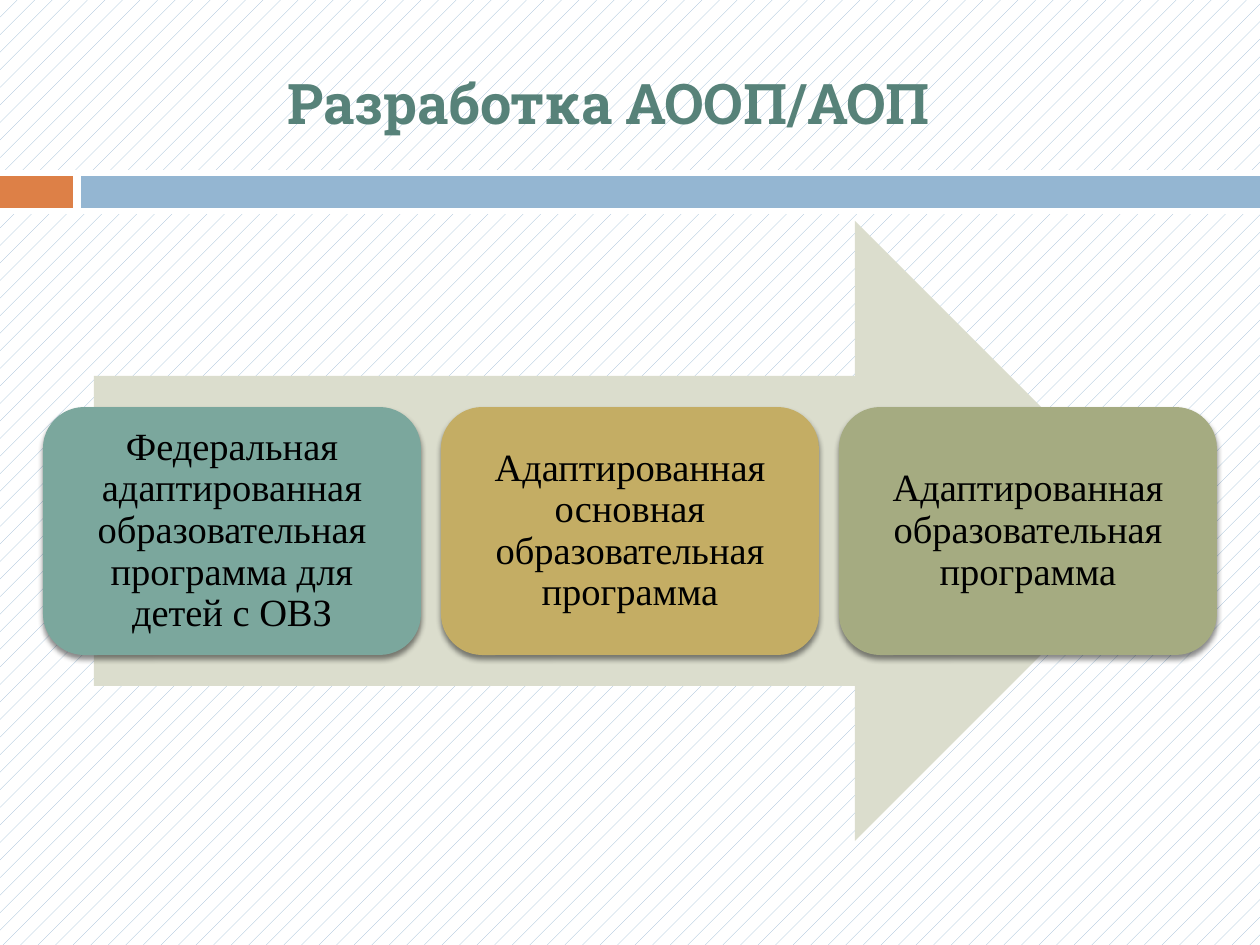
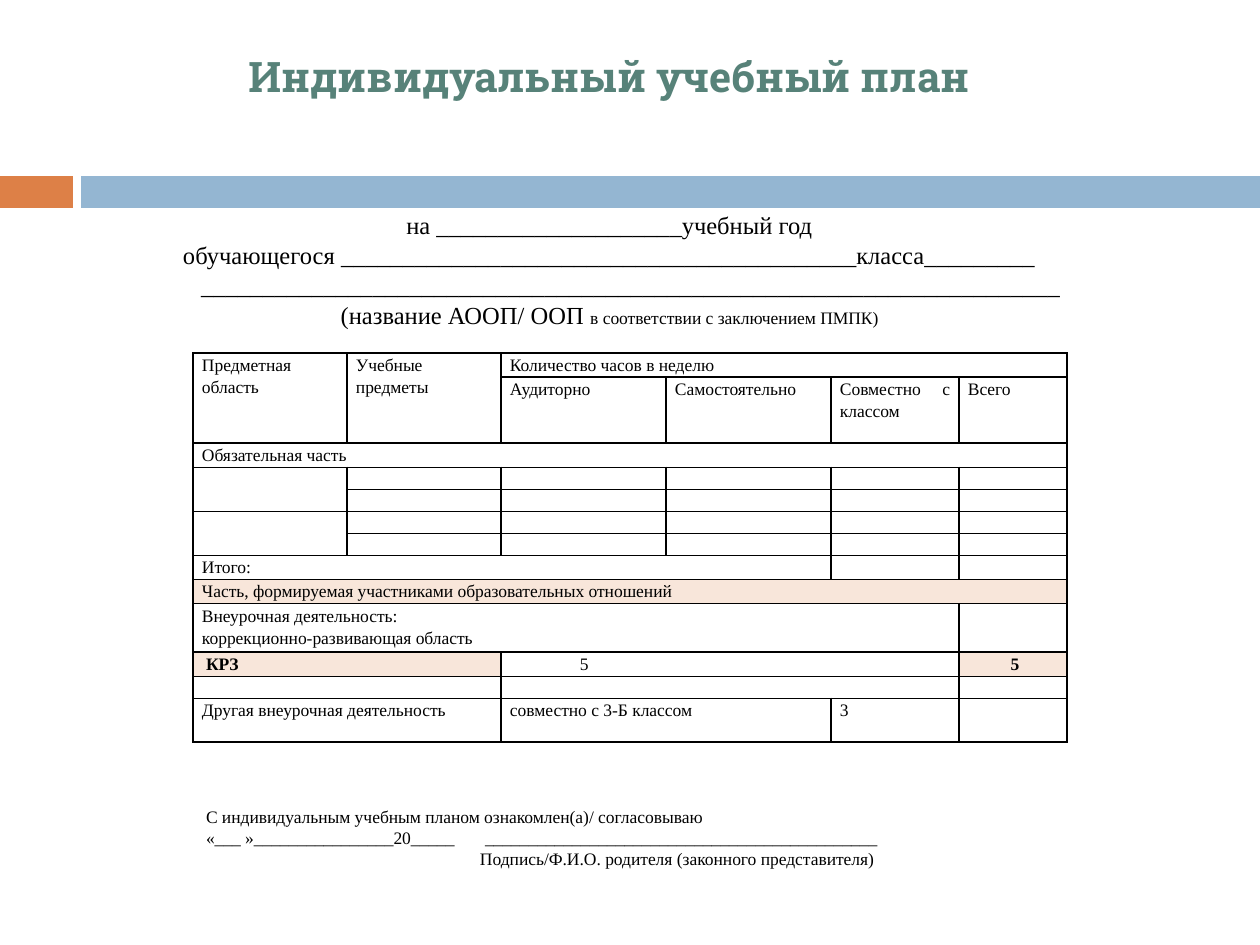
from lxml import etree
from pptx import Presentation
from pptx.dml.color import RGBColor
from pptx.enum.dml import MSO_PATTERN
from pptx.enum.shapes import MSO_SHAPE
from pptx.enum.text import MSO_ANCHOR, PP_ALIGN
from pptx.oxml.ns import qn
from pptx.util import Emu, Pt

RECT, ROUND_RECT = MSO_SHAPE.RECTANGLE, MSO_SHAPE.ROUNDED_RECTANGLE
RIGHT_ARROW = MSO_SHAPE.RIGHT_ARROW
LEFT, CENTER, JUSTIFY = PP_ALIGN.LEFT, PP_ALIGN.CENTER, PP_ALIGN.JUSTIFY
TOP, MIDDLE = MSO_ANCHOR.TOP, MSO_ANCHOR.MIDDLE
DOTS = MSO_PATTERN.PERCENT_5

WHITE = RGBColor(0xFF, 0xFF, 0xFF)
BLACK = RGBColor(0x00, 0x00, 0x00)
ORANGE = RGBColor(0xDD, 0x80, 0x47)
BLUE = RGBColor(0x94, 0xB6, 0xD2)
GREEN = RGBColor(0x57, 0x82, 0x79)
PALE_OLIVE = RGBColor(0xDB, 0xDD, 0xCD)
TEAL = RGBColor(0x7B, 0xA7, 0x9D)
SAND = RGBColor(0xC4, 0xAD, 0x64)
OLIVE = RGBColor(0xA5, 0xAB, 0x81)
PEACH = RGBColor(0xF8, 0xE6, 0xDA)

TITLE_FONT, BODY_FONT = "Roboto Slab", "Times New Roman"
PX_PER_INCH = 126


def px(length):
    return Emu(round(length * 914400 / PX_PER_INCH))


class Deck:
    """Holds the presentation, its style and the current slide."""

    def __init__(self):
        self.prs = Presentation()
        self.prs.slide_width, self.prs.slide_height = px(1260), px(945)
        self.slide = None

    def new_slide(self, title, title_size, title_top):
        self.slide = self.prs.slides.add_slide(self.prs.slide_layouts[6])
        # Band under the title
        self.shape(RECT, 0, 170, 1260, 44, WHITE)
        self.shape(RECT, 0, 176, 73, 32, ORANGE)
        self.shape(RECT, 81, 176, 1179, 32, BLUE)
        self.text_box(0, title_top, 1218, 136, [title], title_size, CENTER, anchor=MIDDLE,
                      font=TITLE_FONT, color=GREEN, bold=True)

    def pattern_background(self):
        fill = self.slide.background.fill
        fill.patterned()
        fill.pattern = DOTS
        fill.fore_color.rgb, fill.back_color.rgb = BLUE, WHITE

    def shape(self, kind, left, top, width, height, color):
        shape = self.slide.shapes.add_shape(kind, px(left), px(top), px(width), px(height))
        shape.fill.solid()
        shape.fill.fore_color.rgb = color
        shape.line.fill.background()
        shape.shadow.inherit = False
        return shape

    def card(self, left, top, width, height, color, text):
        card = self.shape(ROUND_RECT, left, top, width, height, color)
        effects = card._element.spPr.find(qn("a:effectLst"))
        shadow = etree.SubElement(effects, qn("a:outerShdw"), blurRad=str(Pt(3)),
                                  dist=str(Pt(2.4)), dir="5400000", rotWithShape="0")
        black = etree.SubElement(shadow, qn("a:srgbClr"), val="000000")
        etree.SubElement(black, qn("a:alpha"), val="45000")
        self.set_lines(card.text_frame, [text], 22, CENTER, anchor=MIDDLE, spacing=0.9,
                       margins=(11, 11))

    def text_box(self, left, top, width, height, lines, size, align, **style):
        box = self.slide.shapes.add_textbox(px(left), px(top), px(width), px(height))
        self.set_lines(box.text_frame, lines, size, align, **style)
        return box.text_frame.paragraphs

    def set_lines(self, frame, lines, size, align, anchor=TOP, spacing=1.0, margins=(12, 6),
                  **font):
        frame.word_wrap = True
        frame.vertical_anchor = anchor
        frame.margin_left = frame.margin_right = px(margins[0])
        frame.margin_top = frame.margin_bottom = px(margins[1])
        frame.text = "\n".join(lines)
        for paragraph in frame.paragraphs:
            paragraph.alignment = align
            paragraph.line_spacing = spacing
            for run in paragraph.runs:
                self.format_run(run, size, **font)

    def format_run(self, run, size, font=BODY_FONT, color=BLACK, bold=False):
        run.font.name, run.font.size = font, Pt(size)
        run.font.color.rgb, run.font.bold = color, bold

    def indent(self, paragraph, left):
        paragraph._p.get_or_add_pPr().set("marL", str(px(left)))

    def tab_stop(self, paragraph, position):
        tabs = etree.SubElement(paragraph._p.get_or_add_pPr(), qn("a:tabLst"))
        etree.SubElement(tabs, qn("a:tab"), pos=str(px(position)), algn="l")

    def table(self, left, top, widths, heights):
        frame = self.slide.shapes.add_table(len(heights), len(widths), px(left), px(top),
                                            px(sum(widths)), px(sum(heights)))
        table = frame.table
        table.first_row = table.horz_banding = False
        for column, width in zip(table.columns, widths):
            column.width = px(width)
        for row, height in zip(table.rows, heights):
            row.height = px(height)
        for cell in table.iter_cells():
            self.plain_cell(cell)
        return table

    def plain_cell(self, cell):
        """Black borders, no fill, and a small font in an empty cell."""
        cell.margin_left = cell.margin_right = px(9)
        cell.margin_top = cell.margin_bottom = 0
        properties = cell._tc.get_or_add_tcPr()
        for side in ("lnL", "lnR", "lnT", "lnB"):
            line = etree.SubElement(properties, qn(f"a:{side}"), w=str(Pt(1)))
            solid = etree.SubElement(line, qn("a:solidFill"))
            etree.SubElement(solid, qn("a:srgbClr"), val=str(BLACK))
        cell.fill.background()
        etree.SubElement(cell.text_frame.paragraphs[0]._p, qn("a:endParaRPr"), sz="1000")

    def fill_cell(self, cell, text, align=JUSTIFY, bold=False, indent=0):
        cell.text_frame.text = text
        for paragraph in cell.text_frame.paragraphs:
            paragraph.alignment = align
            paragraph.line_spacing = 1.15
            self.indent(paragraph, indent)
            for run in paragraph.runs:
                self.format_run(run, 10, bold=bold)


def programmes_slide(deck):
    deck.new_slide("Разработка АООП/АОП", 32, 34)
    deck.pattern_background()
    deck.shape(RIGHT_ARROW, 94, 221, 1071, 620, PALE_OLIVE)
    programmes = [
        (TEAL, "Федеральная адаптированная образовательная программа для детей с ОВЗ"),
        (SAND, "Адаптированная основная образовательная программа"),
        (OLIVE, "Адаптированная образовательная программа"),
    ]
    for i, (color, name) in enumerate(programmes):
        deck.card(43 + 398 * i, 407, 378, 248, color, name)


def study_plan_slide(deck):
    deck.new_slide("Индивидуальный учебный план", 24, 8)

    # Form heading
    heading = deck.text_box(142, 210, 935, 120, [
        "на " + "_" * 20 + "учебный год",
        "обучающегося " + "_" * 42 + "класса" + "_" * 9,
        "_" * 70,
        "(название АООП/ ООП ",
    ], 14, CENTER, spacing=Pt(17), margins=(0, 0))
    deck.indent(heading[2], 43)
    conclusion = heading[3].add_run()
    conclusion.text = "в соответствии с заключением ПМПК)"
    deck.format_run(conclusion, 10)

    # Hours table: row heights follow from the number of text lines
    row_lines = [1, 3, 1, 1, 1, 1, 1, 1, 1, 2, 1, 1, 2]
    hours = deck.table(193, 353, [154, 154, 165, 165, 128, 108], [22 * n for n in row_lines])
    merges = [
        (0, 0, 1, 0), (0, 1, 1, 1), (0, 2, 0, 5), (2, 0, 2, 5), (3, 0, 4, 0),
        (5, 0, 6, 0), (7, 0, 7, 3), (8, 0, 8, 5), (9, 0, 9, 4), (10, 0, 10, 1),
        (10, 2, 10, 4), (11, 0, 11, 1), (11, 2, 11, 4), (12, 0, 12, 1), (12, 2, 12, 3),
    ]
    for top, left, bottom, right in merges:
        hours.cell(top, left).merge(hours.cell(bottom, right))
    entries = {
        (0, 0): "Предметная область",
        (0, 1): "Учебные предметы",
        (0, 2): "Количество часов в неделю",
        (1, 2): "Аудиторно",
        (1, 3): "Самостоятельно",
        (1, 4): "Совместно с классом",
        (1, 5): "Всего",
        (2, 0): "Обязательная часть",
        (7, 0): "Итого:",
        (8, 0): "Часть, формируемая участниками образовательных отношений",
        (9, 0): "Внеурочная деятельность:\nкоррекционно-развивающая область",
        (12, 0): "Другая внеурочная деятельность",
        (12, 2): "совместно с 3-Б классом",
        (12, 4): "3",
    }
    for position, text in entries.items():
        deck.fill_cell(hours.cell(*position), text)
    deck.fill_cell(hours.cell(10, 0), "КРЗ", bold=True, indent=4)
    deck.fill_cell(hours.cell(10, 2), "5", indent=70)
    deck.fill_cell(hours.cell(10, 5), "5", CENTER, bold=True, indent=4)
    for position in [(8, 0), (10, 0), (10, 5)]:
        tinted = hours.cell(*position)
        tinted.fill.solid()
        tinted.fill.fore_color.rgb = PEACH

    # Parent's signature
    signature = deck.text_box(194, 800, 764, 77, [
        "С индивидуальным учебным планом ознакомлен(а)/ согласовываю",
        "«___ »" + "_" * 16 + "20_____\t" + "_" * 45,
        "Подпись/Ф.И.О. родителя (законного представителя)",
    ], 10, LEFT, spacing=Pt(12))
    deck.tab_stop(signature[1], 279)
    deck.indent(signature[2], 274)


def main():
    deck = Deck()
    programmes_slide(deck)
    study_plan_slide(deck)
    deck.prs.save("out.pptx")


if __name__ == "__main__":
    main()
